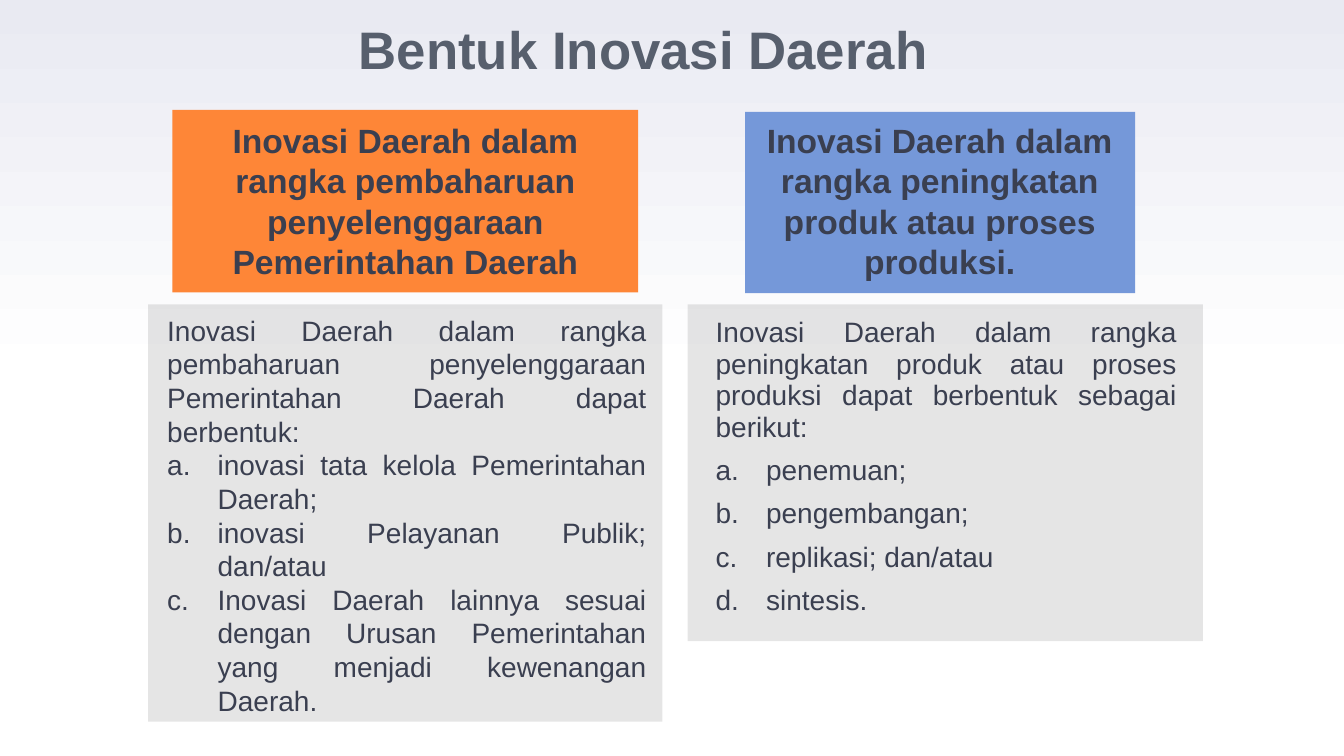
from copy import deepcopy

from lxml import etree
from pptx import Presentation
from pptx.dml.color import RGBColor
from pptx.enum.shapes import MSO_SHAPE
from pptx.enum.text import MSO_ANCHOR, MSO_AUTO_SIZE, PP_ALIGN
from pptx.oxml.ns import qn
from pptx.util import Inches, Pt

RECT = MSO_SHAPE.RECTANGLE
CENTER, JUSTIFY = PP_ALIGN.CENTER, PP_ALIGN.JUSTIFY
TOP, MIDDLE = MSO_ANCHOR.TOP, MSO_ANCHOR.MIDDLE
NO_AUTOFIT = MSO_AUTO_SIZE.NONE

COLORS = {
    "white": "FFFFFF", "mist": "E9EAF2", "title": "575F6D", "text": "3A3F50",
    "panel": "000000", "orange": "FE8637", "blue": "7598D9",
}
FONT = "Arial"
PANEL_OPACITY = 10  # percent
LIST_INDENT = 0.5

TITLE = "Bentuk Inovasi Daerah"
TITLE_BOX = (1.74, 0.13, 9.28, 0.7)

# Boxes are left, top, width, height in inches
COLUMNS = [
    {
        "heading": "Inovasi Daerah dalam rangka pembaharuan penyelenggaraan Pemerintahan Daerah",
        "intro": "Inovasi Daerah dalam rangka pembaharuan penyelenggaraan Pemerintahan Daerah "
                 "dapat berbentuk:",
        "items": [
            "inovasi tata kelola Pemerintahan Daerah;",
            "inovasi Pelayanan Publik; dan/atau",
            "Inovasi Daerah lainnya sesuai dengan Urusan Pemerintahan yang menjadi "
            "kewenangan Daerah.",
        ],
        "color": "orange",
        "panel_box": (1.47, 3.02, 5.1, 4.14),
        "banner_box": (1.71, 1.09, 4.62, 1.81),
        "body_box": (1.56, 3.06, 4.95, 4.14),
        "heading_box": (2.16, 1.14, 3.72, 1.72),
        "spacing": 1,
        "after": 0,
    },
    {
        "heading": "Inovasi Daerah dalam rangka peningkatan produk atau proses produksi.",
        "intro": "Inovasi Daerah dalam rangka peningkatan produk atau proses produksi "
                 "dapat berbentuk sebagai berikut:",
        "items": ["penemuan;", "pengembangan;", "replikasi; dan/atau", "sintesis."],
        "color": "blue",
        "panel_box": (6.82, 3.02, 5.11, 3.34),
        "banner_box": (7.39, 1.11, 3.87, 1.8),
        "body_box": (7, 3.1, 4.77, 3.08),
        "heading_box": (7.29, 1.14, 4.06, 1.72),
        "spacing": 0.94,
        "after": 8.3,
    },
]


def rgb(name):
    return RGBColor.from_string(COLORS[name])


def place(sp, box):
    sp.left, sp.top, sp.width, sp.height = (Inches(v) for v in box)


def letter(p):
    """Number a paragraph a., b., c. with a hanging indent."""
    pPr = p._p.get_or_add_pPr()
    pPr.set("marL", str(Inches(LIST_INDENT)))
    pPr.set("indent", str(-Inches(LIST_INDENT)))
    etree.SubElement(pPr, qn("a:buFont"), typeface="+mj-lt")
    etree.SubElement(pPr, qn("a:buAutoNum"), type="alphaLcPeriod")


def write(sp, lines, size, color="text", bold=False, align=CENTER, anchor=TOP,
          spacing=1, after=0, lettered_from=None):
    tf = sp.text_frame
    tf.word_wrap = True
    tf.auto_size = NO_AUTOFIT
    tf.vertical_anchor = anchor
    tf.margin_left = tf.margin_right = Inches(0.1)
    tf.margin_top = tf.margin_bottom = Inches(0.05)
    for i, line in enumerate(lines):
        p = tf.add_paragraph() if i else tf.paragraphs[0]
        p.alignment = align
        p.line_spacing = float(spacing)
        p.space_before = Pt(0)
        p.space_after = Pt(after)
        if lettered_from is not None and i >= lettered_from:
            letter(p)
        r = p.add_run()
        r.text = line
        r.font.name = FONT
        r.font.size = Pt(size)
        r.font.bold = bold
        r.font.color.rgb = rgb(color)


def add_rect(slide, box, color, opacity=100):
    sp = slide.shapes.add_shape(RECT, *(Inches(v) for v in box))
    sp.shadow.inherit = False
    sp.line.fill.background()
    sp.fill.solid()
    sp.fill.fore_color.rgb = rgb(color)
    if opacity < 100:
        clr = sp._element.spPr.find(qn("a:solidFill"))[0]
        etree.SubElement(clr, qn("a:alpha"), val=str(opacity * 1000))


def add_text(slide, box, lines, **fmt):
    sp = slide.shapes.add_textbox(*(Inches(v) for v in box))
    write(sp, lines, **fmt)


def paint_background(slide):
    """Fade from white in the lower half to mist at the top."""
    fill = slide.background.fill
    fill.gradient()
    fill.gradient_angle = 90
    stops = slide.element.find(".//" + qn("a:gsLst"))
    stops.insert(1, deepcopy(stops[0]))
    fades = ((0, "white"), (0.5, "white"), (1, "mist"))
    for stop, (position, color) in zip(fill.gradient_stops, fades):
        stop.position = position
        stop.color.rgb = rgb(color)


def add_column(slide, col):
    add_rect(slide, col["panel_box"], "panel", PANEL_OPACITY)
    add_rect(slide, col["banner_box"], col["color"])
    add_text(slide, col["body_box"], [col["intro"], *col["items"]], size=20,
             align=JUSTIFY, spacing=col["spacing"], after=col["after"], lettered_from=1)
    add_text(slide, col["heading_box"], [col["heading"]], size=24, bold=True)


def main():
    prs = Presentation()
    prs.slide_width, prs.slide_height = Inches(13.33), Inches(7.5)
    slide = prs.slides.add_slide(prs.slide_layouts[5])
    paint_background(slide)
    title = slide.shapes.title
    place(title, TITLE_BOX)
    write(title, [TITLE], size=37.7, color="title", bold=True, anchor=MIDDLE)
    for col in COLUMNS:
        add_column(slide, col)
    prs.save("out.pptx")


if __name__ == "__main__":
    main()
